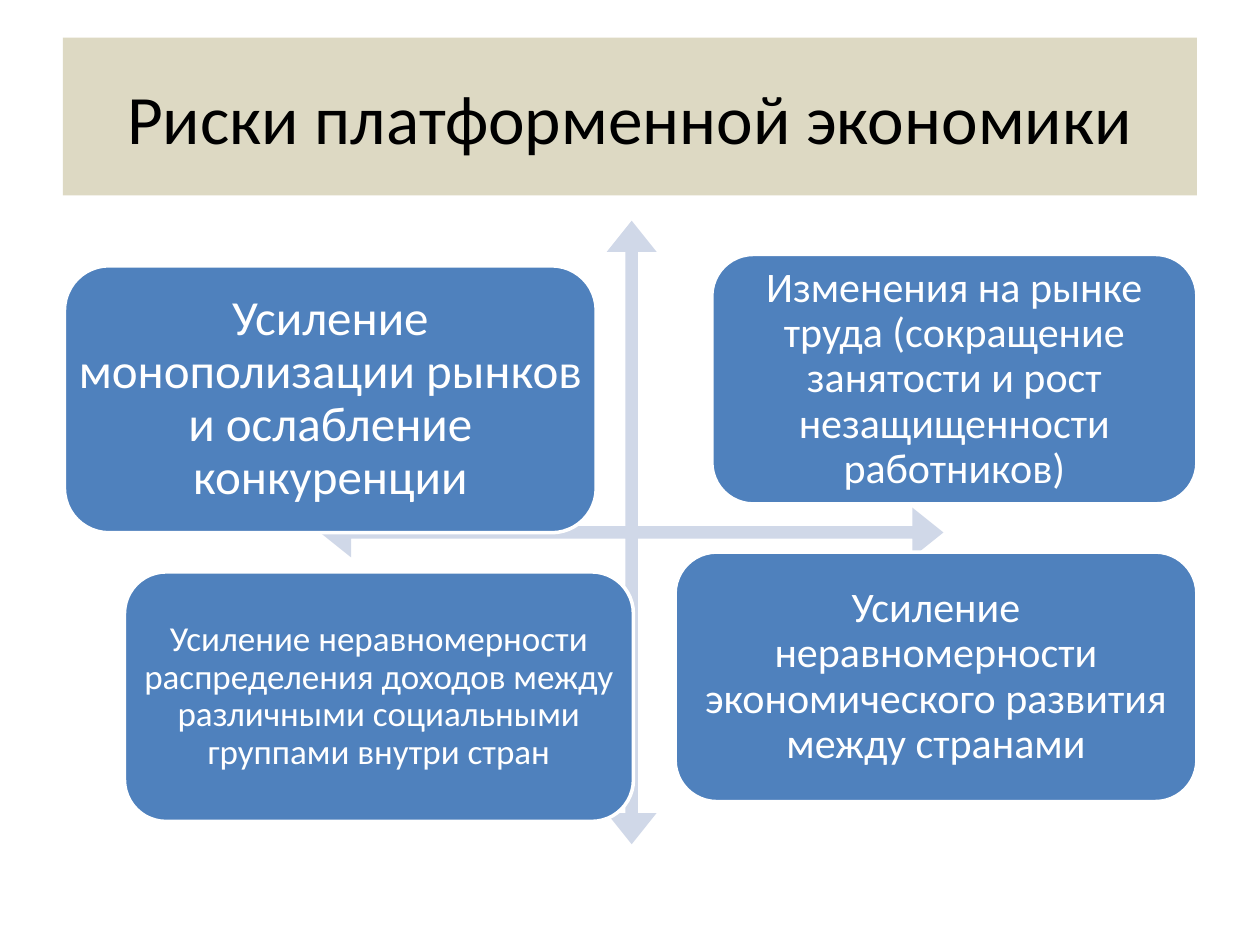
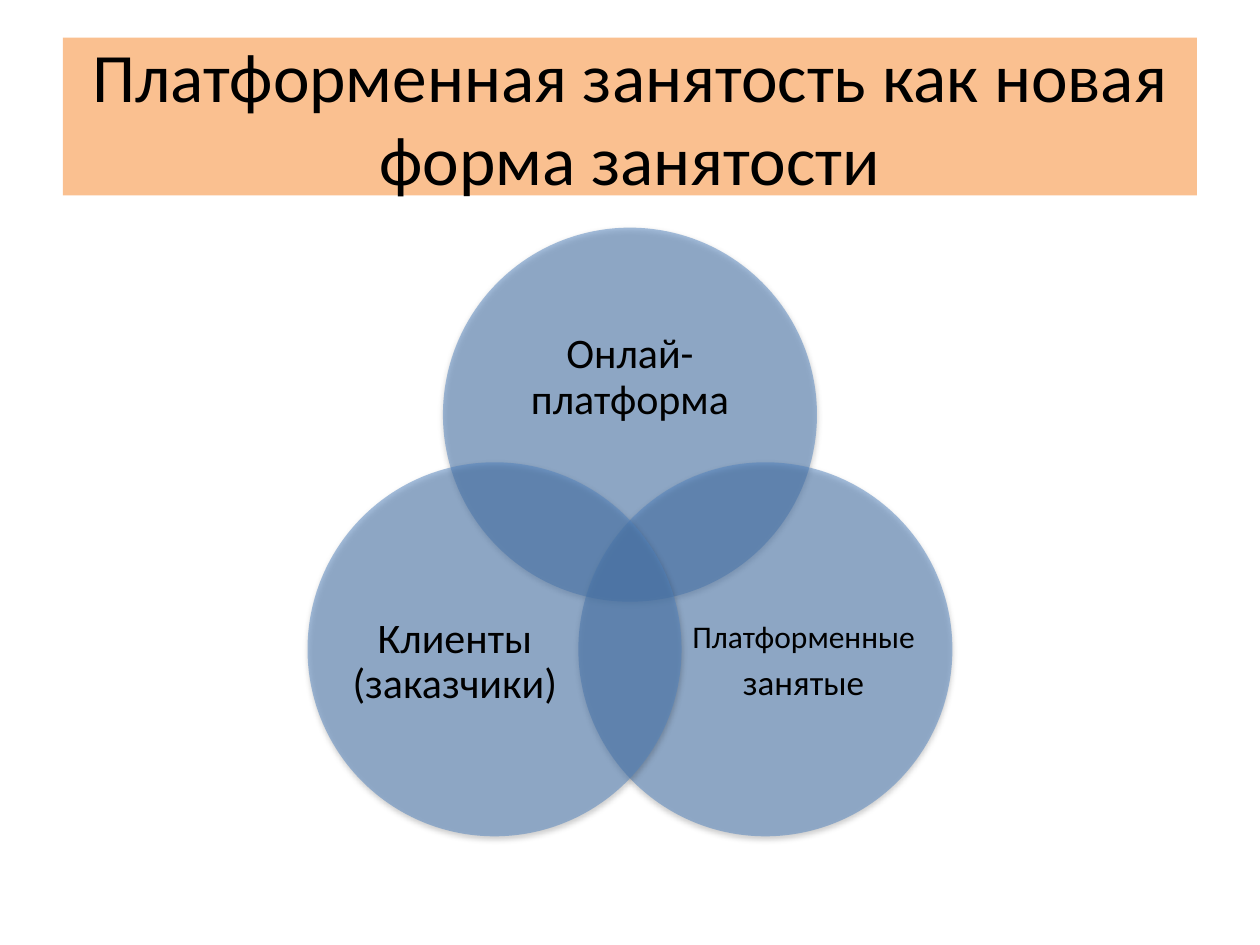
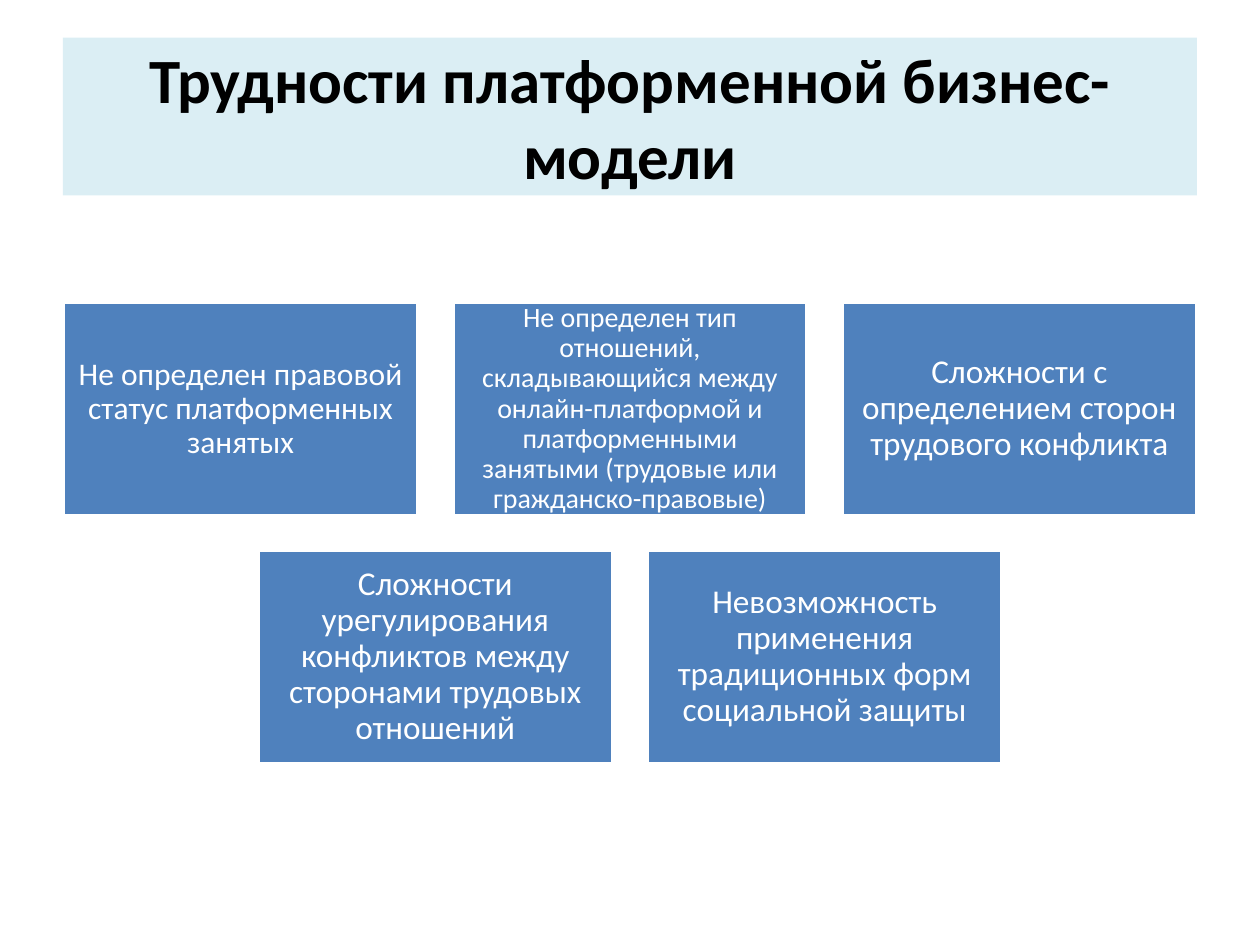
"""Build three slides on the risks and difficulties of the platform economy."""
from pptx import Presentation
from pptx.dml.color import RGBColor
from pptx.enum.shapes import MSO_SHAPE
from pptx.enum.text import MSO_ANCHOR, PP_ALIGN
from pptx.oxml import parse_xml
from pptx.oxml.ns import nsdecls, qn
from pptx.util import Cm, Pt

FONT = "Calibri"
BLUE = "4F81BD"
PALE_BLUE = "D0D8E8"
WHITE = "FFFFFF"
BLACK = "000000"
SLIDE_WIDTH = 25.4


def add_filled_shape(slide, kind, left, top, width, height, fill, outline=None):
    shape = slide.shapes.add_shape(kind, Cm(left), Cm(top), Cm(width), Cm(height))
    shape.shadow.inherit = False
    shape.fill.solid()
    shape.fill.fore_color.rgb = RGBColor.from_string(fill)
    if outline:
        shape.line.color.rgb = RGBColor.from_string(outline)
        shape.line.width = Pt(2)
    else:
        shape.line.fill.background()
    return shape


def write_text(shape, lines, color, margin=0.0, spacing=0.9, bold=False):
    text_frame = shape.text_frame
    text_frame.text = "\n".join(text for text, size in lines)
    text_frame.word_wrap = True
    text_frame.vertical_anchor = MSO_ANCHOR.MIDDLE
    text_frame.margin_left = text_frame.margin_right = Cm(margin)
    text_frame.margin_top = text_frame.margin_bottom = Cm(margin)
    for paragraph, (text, size) in zip(text_frame.paragraphs, lines):
        paragraph.alignment = PP_ALIGN.CENTER
        paragraph.line_spacing = spacing
        paragraph.space_after = Pt(round(size * 0.35))
        for run in paragraph.runs:
            run.font.name = FONT
            run.font.size = Pt(size)
            run.font.bold = bold
            run.font.color.rgb = RGBColor.from_string(color)


presentation = Presentation()
presentation.slide_width = Cm(SLIDE_WIDTH)
presentation.slide_height = Cm(19.05)

titles = [
    ("Риски платформенной экономики", "DDD9C3", 39.6, False),
    ("Платформенная занятость как новая форма занятости", "FAC090", 39.6, False),
    ("Трудности платформенной бизнес-модели", "DBEEF4", 36, True),
]
for title, band_color, size, bold in titles:
    slide = presentation.slides.add_slide(presentation.slide_layouts[6])
    band = add_filled_shape(slide, MSO_SHAPE.RECTANGLE, 1.27, 0.76, 22.86, 3.18, band_color)
    write_text(band, [(title, size)], BLACK, margin=0.25, spacing=1.0, bold=bold)
risks_slide, employment_slide, difficulties_slide = presentation.slides

arrows = add_filled_shape(risks_slide, MSO_SHAPE.QUAD_ARROW, 6.45, 4.45, 12.57, 12.57, PALE_BLUE)
for index, adjustment in enumerate((0.02, 0.04, 0.05)):
    arrows.adjustments[index] = adjustment

risks = [
    (1.3, 5.36, 10.72, 5.38, 28, "Усиление монополизации рынков и ослабление конкуренции"),
    (14.35, 5.13, 9.78, 5.03, 24,
     "Изменения на рынке труда (сокращение занятости и рост незащищенности работников)"),
    (2.51, 11.53, 10.26, 5.03, 20,
     "Усиление неравномерности распределения доходов между различными социальными "
     "группами внутри стран"),
    (13.61, 11.13, 10.52, 5.03, 24,
     "Усиление неравномерности экономического развития между странами"),
]
for left, top, width, height, size, text in risks:
    card = add_filled_shape(
        risks_slide, MSO_SHAPE.ROUNDED_RECTANGLE, left, top, width, height, BLUE, WHITE)
    write_text(card, [(text, size)], WHITE)

diameter = 7.54
top_circle_left = (SLIDE_WIDTH - diameter) / 2
side_offset = 2.73
participants = [
    (0, 4.59, (9.93, 5.92, 5.54, 3.4), [("Онлай-платформа", 24)]),
    (side_offset, 9.32, (13.94, 11.28, 4.52, 4.14), [("Платформенные", 18), ("занятые", 20)]),
    (-side_offset, 9.32, (6.91, 11.28, 4.52, 4.14), [("Клиенты (заказчики)", 24)]),
]
for offset, top, label_box, lines in participants:
    circle = add_filled_shape(
        employment_slide, MSO_SHAPE.OVAL, top_circle_left + offset, top, diameter, diameter, BLUE)
    properties = circle._element.spPr
    fill_color = properties.find(qn("a:solidFill")).find(qn("a:srgbClr"))
    fill_color.append(parse_xml(f'<a:alpha {nsdecls("a")} val="50000"/>'))
    properties.find(qn("a:effectLst")).append(parse_xml(
        f'<a:outerShdw {nsdecls("a")} blurRad="40000" dist="20000" dir="5400000" rotWithShape="0">'
        f'<a:srgbClr val="{BLACK}"><a:alpha val="38000"/></a:srgbClr></a:outerShdw>'))
    label = employment_slide.shapes.add_textbox(*[Cm(length) for length in label_box])
    write_text(label, lines, BLACK)

tile_width, tile_height, gap = 7.14, 4.29, 0.71
difficulty_rows = [
    [
        ("Не определен правовой статус платформенных занятых", 18),
        ("Не определен тип отношений, складывающийся между онлайн-платформой и "
         "платформенными занятыми (трудовые или гражданско-правовые)", 16),
        ("Сложности с определением сторон трудового конфликта", 19),
    ],
    [
        ("Сложности урегулирования конфликтов между сторонами трудовых отношений", 19),
        ("Невозможность применения традиционных форм социальной защиты", 19),
    ],
]
for row_index, row in enumerate(difficulty_rows):
    row_width = len(row) * (tile_width + gap) - gap
    row_left = (SLIDE_WIDTH - row_width) / 2
    top = 6.1 + row_index * (tile_height + gap)
    for column_index, difficulty in enumerate(row):
        left = row_left + column_index * (tile_width + gap)
        tile = add_filled_shape(
            difficulties_slide, MSO_SHAPE.RECTANGLE, left, top, tile_width, tile_height, BLUE, WHITE)
        write_text(tile, [difficulty], WHITE, margin=0.19)

presentation.save("out.pptx")
